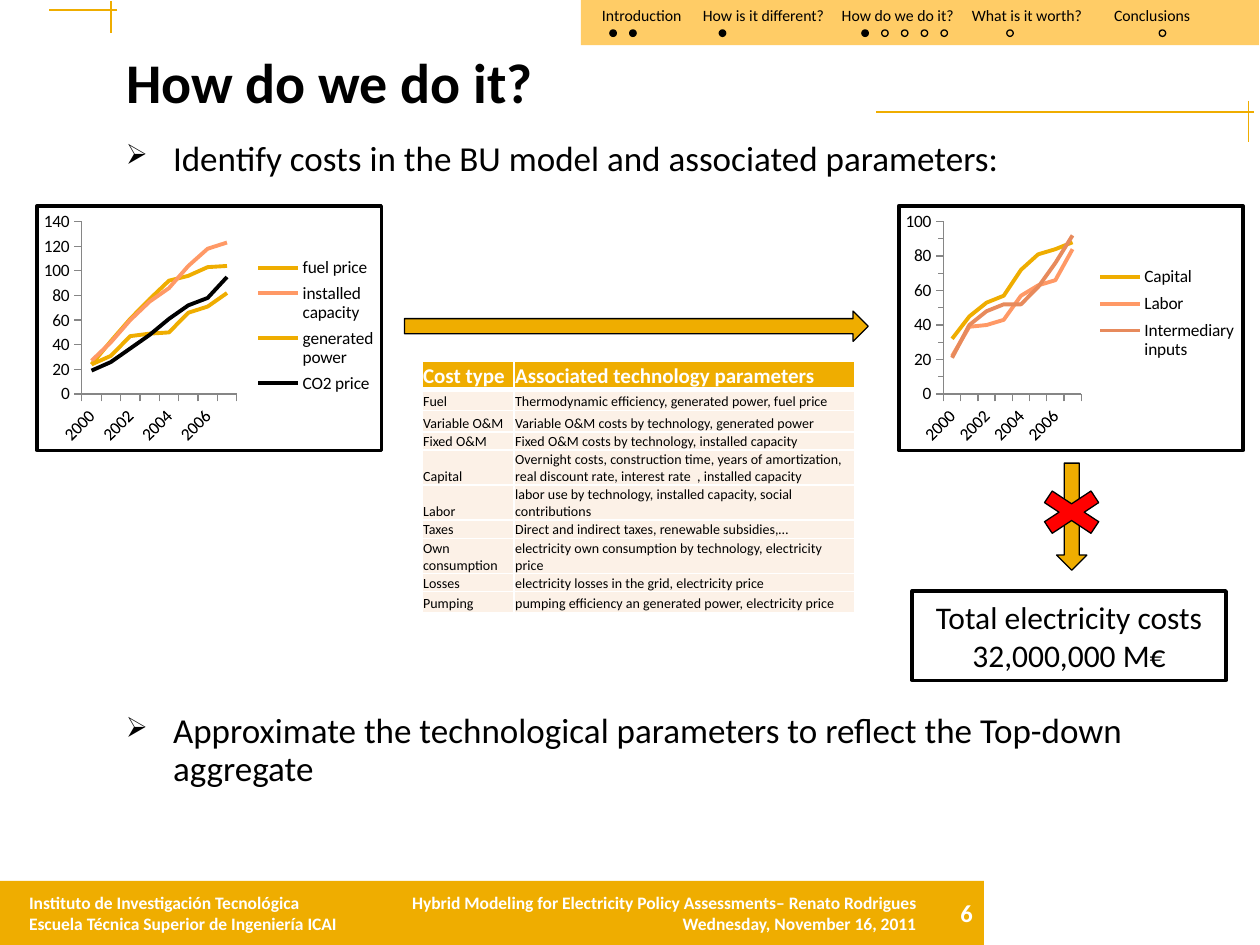
"""Build the slide on identifying costs in the bottom-up model."""
from dataclasses import dataclass
from typing import Optional

from pptx import Presentation
from pptx.chart.data import CategoryChartData
from pptx.dml.color import RGBColor
from pptx.enum.chart import XL_LEGEND_POSITION, XL_TICK_MARK
from pptx.enum.chart import XL_CHART_TYPE
from pptx.enum.shapes import MSO_CONNECTOR, MSO_SHAPE
from pptx.enum.text import MSO_ANCHOR, PP_ALIGN
from pptx.oxml import parse_xml
from pptx.oxml.ns import nsdecls, qn
from pptx.util import Pt

AMBER = RGBColor(0xEF, 0xAD, 0x00)
SAND = RGBColor(0xFF, 0xCC, 0x66)
CREAM = RGBColor(0xFC, 0xF1, 0xE7)
ORANGE = RGBColor(0xFF, 0x99, 0x66)
COPPER = RGBColor(0xE7, 0x8A, 0x5C)
GRAY = RGBColor(0x86, 0x86, 0x86)
RED = RGBColor(0xFF, 0x00, 0x00)
BLACK = RGBColor(0x00, 0x00, 0x00)
WHITE = RGBColor(0xFF, 0xFF, 0xFF)
FONT = "Calibri"


@dataclass
class Section:
    label: str
    left: float
    dot_left: float
    filled: int
    hollow: int


@dataclass
class Series:
    name: str
    values: list
    color: RGBColor


@dataclass
class LineChart:
    left: float
    top_value: int
    minor_ticks: bool
    plot: tuple
    legend: tuple
    series: list


SECTIONS = [
    Section("Introduction", 344, 348.5, 2, 0),
    Section("How is it different?", 401.7, 411, 1, 0),
    Section("How do we do it?", 481, 492.5, 1, 4),
    Section("What is it worth?", 555.4, 575.3, 0, 1),
    Section("Conclusions", 636.6, 662.4, 0, 1),
]
CHARTS = [
    LineChart(20.2, 140, False, (0.13, 0.065, 0.45, 0.705), (0.63, 0.19, 0.36, 0.6), [
        Series("fuel price", [24, 43, 61, 77, 92, 96, 103, 104], AMBER),
        Series("installed capacity", [27, 42, 60, 75, 86, 104, 118, 123], ORANGE),
        Series("generated power", [24, 31, 47, 49, 50, 66, 71, 82], AMBER),
        Series("CO2 price", [19, 26, 37, 48, 61, 72, 78, 95], BLACK)]),
    LineChart(512.6, 100, True, (0.13, 0.065, 0.4, 0.705), (0.58, 0.22, 0.41, 0.44), [
        Series("Capital", [32, 45, 53, 57, 72, 81, 84, 88], AMBER),
        Series("Labor", [22, 39, 40, 43, 57, 63, 66, 84], ORANGE),
        Series("Intermediary inputs", [21, 40, 48, 52, 52, 62, 76, 92], COPPER)]),
]
COSTS = [
    ("Cost type", "Associated technology parameters", 16),
    ("Fuel", "Thermodynamic efficiency, generated power, fuel price", 12),
    ("Variable O&M", "Variable O&M costs by technology, generated power", 12.4),
    ("Fixed O&M", "Fixed O&M costs by technology, installed capacity", 10),
    ("Capital", "Overnight costs, construction time, years of amortization, "
     "real discount rate, interest rate  , installed capacity", 20),
    ("Labor", "labor use by technology, installed capacity, social contributions", 20),
    ("Taxes", "Direct and indirect taxes, renewable subsidies,…", 10.8),
    ("Own consumption", "electricity own consumption by technology, electricity price", 20),
    ("Losses", "electricity losses in the grid, electricity price", 10),
    ("Pumping", "pumping efficiency an generated power, electricity price", 12),
]


def write(frame, lines: list, size: float, color=BLACK, bold=False, align=PP_ALIGN.LEFT) -> None:
    for index, line in enumerate(lines):
        para = frame.paragraphs[0] if index == 0 else frame.add_paragraph()
        para.alignment = align
        span = para.add_run()
        span.text = line
        span.font.name, span.font.size, span.font.bold = FONT, Pt(size), bold
        span.font.color.rgb = color


def set_margins(target, left: float, top: float, right: float, bottom: float) -> None:
    target.margin_left, target.margin_top = Pt(left), Pt(top)
    target.margin_right, target.margin_bottom = Pt(right), Pt(bottom)


def add_text(page, place: tuple, lines: list, size: float, margin: float = 0, wrap=True, **style):
    frame = page.shapes.add_textbox(*map(Pt, place)).text_frame
    frame.word_wrap = wrap
    set_margins(frame, 2 * margin, margin, 2 * margin, margin)
    write(frame, lines, size, **style)
    return frame


def add_bullet(page, top: float, height: float, text: str) -> None:
    para = add_text(page, (64.8, top, 648, height), [text], 20, 3.6).paragraphs[0]
    properties = para._p.get_or_add_pPr()
    properties.set("marL", str(Pt(27)))
    properties.set("indent", str(-Pt(27)))
    properties.append(parse_xml(f'<a:buSzPct {nsdecls("a")} val="80000"/>'))
    properties.append(parse_xml(f'<a:buChar {nsdecls("a")} char="➢"/>'))
    para.line_spacing = 0.9


def add_shape(page, kind, place: tuple, fill: Optional[RGBColor], line: float = 0.75):
    shape = page.shapes.add_shape(kind, *map(Pt, place))
    shape.shadow.inherit = False
    if fill is None:
        shape.fill.background()
    else:
        shape.fill.solid()
        shape.fill.fore_color.rgb = fill
    if line:
        shape.line.color.rgb, shape.line.width = BLACK, Pt(line)
    else:
        shape.line.fill.background()
    return shape


def add_rule(page, ends: tuple) -> None:
    rule = page.shapes.add_connector(MSO_CONNECTOR.STRAIGHT, *map(Pt, ends))
    rule.line.color.rgb, rule.line.width = AMBER, Pt(0.75)
    rule._element.spPr.append(parse_xml(f'<a:effectLst {nsdecls("a")}/>'))


def make_layout(box: tuple, inner: bool):
    target = '<c:layoutTarget val="inner"/>' if inner else ""
    modes = "".join(f'<c:{axis}Mode val="edge"/>' for axis in "xy")
    sizes = "".join(f'<c:{name} val="{value}"/>' for name, value in zip("xywh", box))
    return parse_xml(f'<c:layout {nsdecls("c")}><c:manualLayout>{target}{modes}{sizes}'
                     '</c:manualLayout></c:layout>')


def add_line_chart(page, item: LineChart) -> None:
    data = CategoryChartData()
    data.categories = [str(year) for year in range(2000, 2008)]
    for series in item.series:
        data.add_series(series.name, series.values)
    chart = page.shapes.add_chart(XL_CHART_TYPE.LINE, Pt(item.left), Pt(116.6),
                                  Pt(198.7), Pt(141.8), data).chart
    chart.has_title = False
    chart.font.name, chart.font.size, chart.font.color.rgb = FONT, Pt(10), BLACK
    chart.plots[0].vary_by_categories = False
    for line, series in zip(chart.plots[0].series, item.series):
        line.smooth = False
        line.format.line.color.rgb, line.format.line.width = series.color, Pt(2.25)
    values, years = chart.value_axis, chart.category_axis
    values.minimum_scale, values.maximum_scale, values.major_unit = 0, item.top_value, 20
    values.has_major_gridlines = False
    if item.minor_ticks:
        values.minor_unit, values.minor_tick_mark = 10, XL_TICK_MARK.OUTSIDE
    for axis in (values, years):
        axis.major_tick_mark = XL_TICK_MARK.OUTSIDE
        axis.format.line.color.rgb = GRAY
        axis.tick_labels.font.size = Pt(10)
    chart.has_legend = True
    chart.legend.position = XL_LEGEND_POSITION.RIGHT
    chart.legend.include_in_layout = False
    root = chart.element
    years_xml = root.find(".//" + qn("c:catAx"))
    years_xml.find(f'{qn("c:txPr")}/{qn("a:bodyPr")}').set("rot", "-2700000")
    years_xml.find(qn("c:noMultiLvlLbl")).addprevious(
        parse_xml(f'<c:tickLblSkip {nsdecls("c")} val="2"/>'))
    plot, legend = (root.find(".//" + qn(tag)) for tag in ("c:plotArea", "c:legend"))
    for part in (plot, legend):
        for old in part.findall(qn("c:layout")):
            part.remove(old)
    plot.insert(0, make_layout(item.plot, True))
    legend.find(qn("c:overlay")).addprevious(make_layout(item.legend, False))
    root.find(qn("c:chart")).addnext(parse_xml(
        f'<c:spPr {nsdecls("c", "a")}><a:solidFill><a:srgbClr val="{WHITE}"/></a:solidFill>'
        f'<a:ln w="{Pt(2)}"><a:solidFill><a:srgbClr val="{BLACK}"/></a:solidFill></a:ln></c:spPr>'))


def add_cost_table(page) -> None:
    table = page.shapes.add_table(len(COSTS), 2, Pt(241.2), Pt(206.5), Pt(247.4), Pt(143.2)).table
    table.columns[0].width, table.columns[1].width = Pt(52.6), Pt(194.8)
    for index, (*texts, height) in enumerate(COSTS):
        header = index == 0
        table.rows[index].height = Pt(height)
        for cell, text in zip(table.rows[index].cells, texts):
            set_margins(cell, 0.6, 0.6, 0.6, 0)
            cell.vertical_anchor = MSO_ANCHOR.BOTTOM
            write(cell.text_frame, [text], 12 if header else 8, WHITE if header else BLACK, header)
            properties = cell._tc.get_or_add_tcPr()
            for side in "LRTB":
                thick = (header and side == "B") or (index == 1 and side == "T")
                properties.append(parse_xml(
                    f'<a:ln{side} {nsdecls("a")} w="{Pt(3 if thick else 1)}"><a:solidFill>'
                    f'<a:srgbClr val="{WHITE}"/></a:solidFill></a:ln{side}>'))
            cell.fill.solid()
            cell.fill.fore_color.rgb = AMBER if header else CREAM


def add_frame(page) -> None:
    add_shape(page, MSO_SHAPE.RECTANGLE, (0, 503.3, 562.3, 36.7), AMBER, 0)
    add_shape(page, MSO_SHAPE.RECTANGLE, (331.9, 0, 387.4, 25.9), SAND, 0)
    white = {"color": WHITE, "bold": True}
    add_text(page, (523.4, 509.8, 39.6, 24.5), ["6"], 14, 3.6, align=PP_ALIGN.RIGHT, **white)
    add_text(page, (16.6, 509.8, 208, 24.5), ["Instituto de Investigación Tecnológica",
             "Escuela Técnica Superior de Ingeniería ICAI"], 10, **white)
    add_text(page, (213.8, 509.8, 309.6, 24.5),
             ["Hybrid Modeling for Electricity Policy Assessments– Renato Rodrigues",
              "Wednesday, November 16, 2011"], 10, align=PP_ALIGN.RIGHT, **white)
    for ends in ((713.5, 57.6, 713.5, 81.4), (716.4, 64, 500.4, 64),
                 (63.4, 0.7, 63.4, 18.7), (67, 5.8, 28, 5.8)):
        add_rule(page, ends)
    for section in SECTIONS:
        add_text(page, (section.left, 3.2, 80, 12), [section.label], 9, wrap=False)
        for index in range(section.filled + section.hollow):
            add_shape(page, MSO_SHAPE.OVAL, (section.dot_left + 11.3 * index, 17.1, 3.7, 3.7),
                      BLACK if index < section.filled else None)


def main() -> None:
    deck = Presentation()
    deck.slide_width, deck.slide_height = Pt(720), Pt(540)
    page = deck.slides.add_slide(deck.slide_layouts[5])
    add_frame(page)
    title = page.shapes.title
    title.left, title.top, title.width, title.height = map(Pt, (67.7, 11.5, 645.8, 56.2))
    set_margins(title.text_frame, 4.3, 2.9, 4.3, 1.4)
    title.text_frame.vertical_anchor = MSO_ANCHOR.BOTTOM
    write(title.text_frame, ["How do we do it?"], 32, bold=True)
    title.text_frame.paragraphs[0].line_spacing = 0.9
    add_bullet(page, 77, 30, "Identify costs in the BU model and associated parameters:")
    add_bullet(page, 404.3, 52,
               "Approximate the technological parameters to reflect the Top-down aggregate")
    add_cost_table(page)
    for item in CHARTS:
        add_line_chart(page, item)
    add_shape(page, MSO_SHAPE.RIGHT_ARROW, (231.1, 177.8, 265, 17.3), AMBER)
    add_shape(page, MSO_SHAPE.RIGHT_ARROW, (581.8, 286.6, 61.2, 17.3), AMBER).rotation = 90
    total = add_shape(page, MSO_SHAPE.RECTANGLE, (521.3, 337.7, 179.3, 51.1), WHITE, 2)
    total.text_frame.word_wrap = False
    write(total.text_frame, ["Total electricity costs", "32,000,000 M€"], 18,
          align=PP_ALIGN.CENTER)
    add_shape(page, MSO_SHAPE.MATH_MULTIPLY, (586.8, 275.8, 51.1, 33.8), RED)
    deck.save("out.pptx")


if __name__ == "__main__":
    main()
